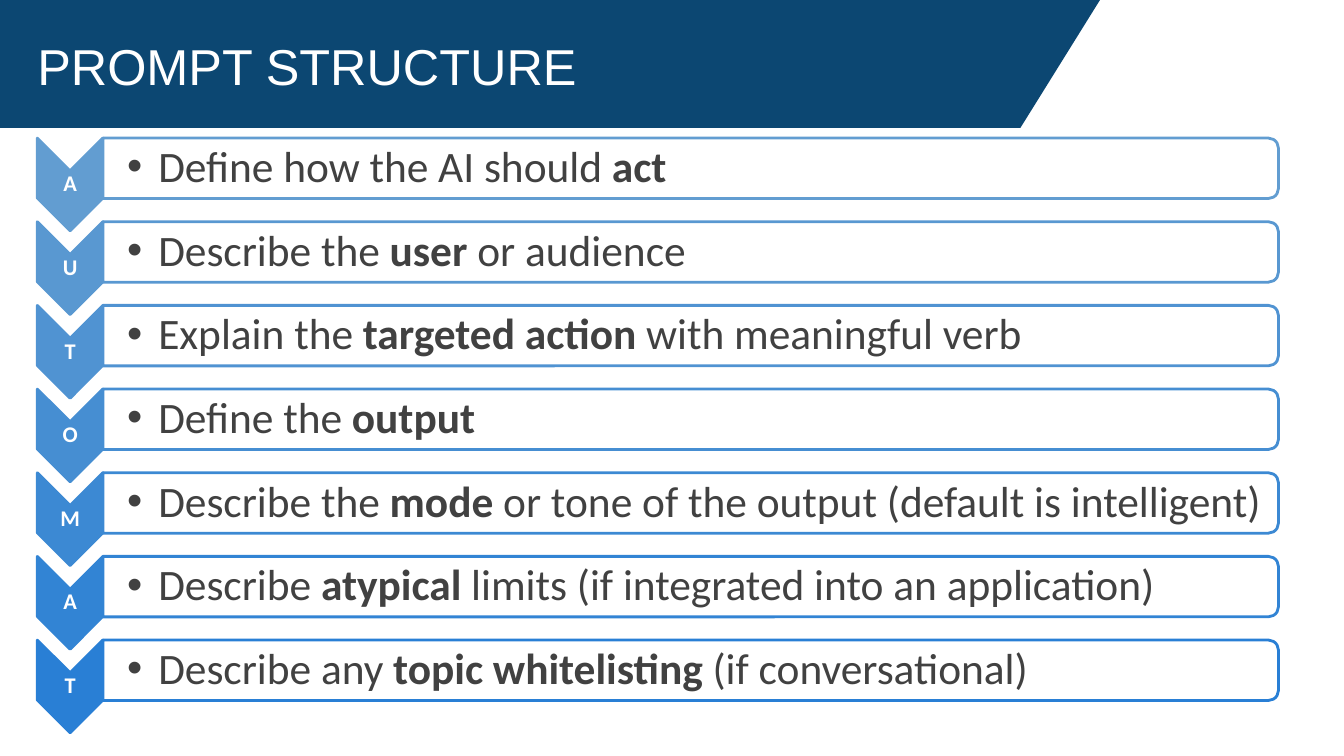
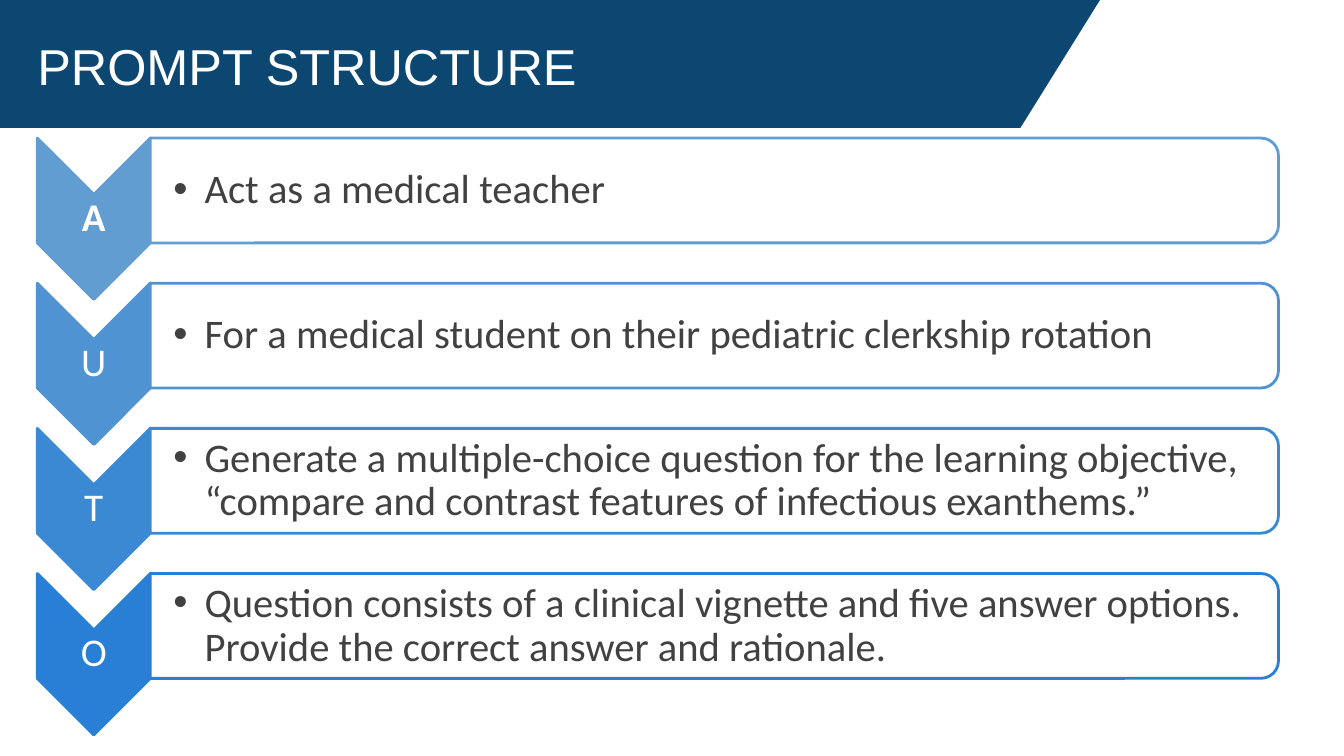
from lxml.etree import SubElement
from pptx import Presentation
from pptx.dml.color import RGBColor
from pptx.enum.shapes import MSO_SHAPE
from pptx.enum.text import MSO_ANCHOR, MSO_AUTO_SIZE, PP_ALIGN
from pptx.oxml.ns import qn
from pptx.util import Inches, Pt

NAVY, WHITE, INK = "0C4772", "FFFFFF", "414141"
TINTS = ["629DD1", "5998D1", "5093D2", "468ED2", "3C89D3", "3284D4", "297FD5"]
LEFT, TOP, RIGHT = 0.37, 1.37, 12.68

AIMS = [
    ("A", "Define how the AI should *act*"),
    ("U", "Describe the *user* or audience"),
    ("T", "Explain the *targeted action* with meaningful verb"),
    ("O", "Define the *output*"),
    ("M", "Describe the *mode* or tone of the output (default is intelligent)"),
    ("A", "Describe *atypical* limits (if integrated into an application)"),
    ("T", "Describe any *topic whitelisting* (if conversational)"),
]
CASE = [
    ("*A*", "Act as a medical teacher"),
    ("U", "For a medical student on their pediatric clerkship rotation"),
    ("T", "Generate a multiple-choice question for the learning objective, "
          "“compare and contrast features of infectious exanthems.”"),
    ("O", "Question consists of a clinical vignette and five answer options. "
          "Provide the correct answer and rationale."),
]


def color(code):
    return RGBColor.from_string(code)


class Deck:
    """Holds the shared style and the slide being drawn."""

    def __init__(self):
        self.prs = Presentation()
        self.prs.slide_width = Inches(13.33)
        self.prs.slide_height = Inches(7.5)
        self.layout = self.prs.slide_layouts[5]
        self.slide = None

    def start(self, title):
        first = self.slide is None
        self.slide = self.prs.slides.add_slide(self.layout)
        if first:
            self.band()
        head = self.slide.shapes.title
        head.left, head.top = Inches(LEFT), Inches(0.21)
        head.width, head.height = Inches(9.82), Inches(0.98)
        self.label(head.text_frame, title, 36, WHITE, "Arial", 0.8)

    def band(self):
        pen = self.slide.shapes.build_freeform(Inches(10.91), 0)
        pen.add_line_segments([(0, 0), (0, Inches(1.27)),
                               (Inches(10.12), Inches(1.27))])
        band = pen.convert_to_shape()
        self.paint(band, NAVY)
        band.line.fill.background()
        self.layout.shapes.element.insert(2, band.element)

    def paint(self, shape, fill):
        shape.shadow.inherit = False
        shape.fill.solid()
        shape.fill.fore_color.rgb = color(fill)

    def turned(self, kind, x, y, w, h, fill, line):
        """Adds a quarter-turned shape that covers the given box."""
        shape = self.slide.shapes.add_shape(
            kind, Inches(x + (w - h) / 2), Inches(y + (h - w) / 2),
            Inches(h), Inches(w))
        shape.rotation = 90
        self.paint(shape, fill)
        shape.line.color.rgb = color(line)
        shape.line.width = Pt(2)

    def label(self, frame, text, size, ink, face="Calibri", lead=0.9,
              align=PP_ALIGN.LEFT, inset=0, pad=0, bullet=False):
        frame.word_wrap = True
        frame.auto_size = MSO_AUTO_SIZE.NONE
        frame.vertical_anchor = MSO_ANCHOR.MIDDLE
        frame.margin_left = Inches(inset or pad)
        frame.margin_top = frame.margin_right = frame.margin_bottom = Inches(pad)
        para = frame.paragraphs[0]
        if bullet:
            props = para._p.get_or_add_pPr()
            props.set("marL", str(Inches(0.31)))
            props.set("indent", str(-Inches(0.31)))
            SubElement(props, qn("a:buFont"), typeface="Arial")
            SubElement(props, qn("a:buChar"), char="•")
        para.alignment = align
        para.line_spacing = lead
        para.font.size, para.font.name = Pt(size), face
        para.font.color.rgb = color(ink)
        for spot, part in enumerate(text.split("*")):
            if part:
                run = para.add_run()
                run.text = part
                if spot % 2:
                    run.font.bold = True

    def box(self, x, y, w, h, text, size, ink, **style):
        box = self.slide.shapes.add_textbox(
            Inches(x), Inches(y), Inches(w), Inches(h))
        self.label(box.text_frame, text, size, ink, **style)

    def rows(self, items, tints, step, wide, tall, high, small, large, inset):
        """Stacks lettered chevrons, each with a bar of text beside it."""
        bar = LEFT + wide
        for spot, ((mark, text), tint) in enumerate(zip(items, tints)):
            y = TOP + spot * step
            self.turned(MSO_SHAPE.CHEVRON, LEFT, y, wide, tall, tint, tint)
            self.box(LEFT, y + wide / 2, wide, tall - wide, mark, small, WHITE,
                     align=PP_ALIGN.CENTER, pad=0.01)
            self.turned(MSO_SHAPE.ROUND_2_SAME_RECTANGLE, bar, y,
                        RIGHT - bar, high, WHITE, tint)
            self.box(bar, y, RIGHT - bar - 0.03, high, text, large, INK,
                     inset=inset, pad=0.02, bullet=True)


def main():
    deck = Deck()
    deck.start("PROMPT STRUCTURE")
    deck.rows([(f"*{mark}*", text) for mark, text in AIMS], TINTS,
              step=0.83, wide=0.65, tall=0.92, high=0.6,
              small=16, large=31, inset=0.24)
    deck.start("PROMPT STRUCTURE")
    deck.rows(CASE, TINTS[::2], step=1.44, wide=1.12, tall=1.6, high=1.04,
              small=28, large=29, inset=0.23)
    deck.prs.save("out.pptx")


if __name__ == "__main__":
    main()
